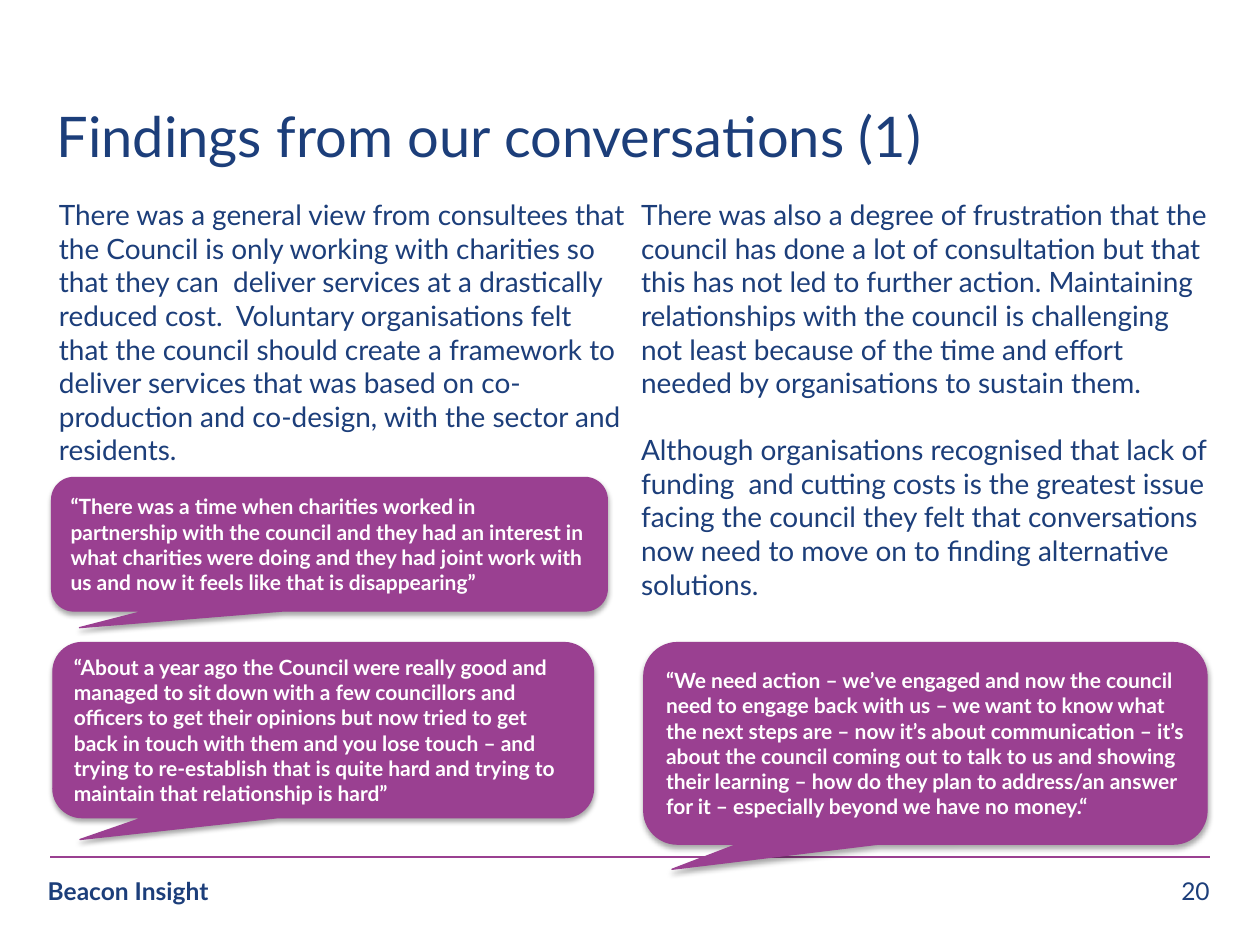
"""Build a slide of consultation findings with three quotation callouts."""
from lxml import etree
from pptx import Presentation
from pptx.dml.color import RGBColor
from pptx.enum.shapes import MSO_CONNECTOR as CONNECTOR, MSO_SHAPE as SHAPE
from pptx.enum.text import MSO_ANCHOR as ANCHOR, PP_ALIGN as ALIGN
from pptx.oxml import parse_xml
from pptx.oxml.ns import nsdecls, qn
from pptx.util import Inches, Pt

WIDTH, HEIGHT = Inches(10), Inches(7.5)
NAVY, PURPLE, WHITE = "1C3E7A", "9A4091", "FFFFFF"
FONT = "Lato"
BODY_SIZE = 16
COLUMN_LEFT, COLUMN_STEP, COLUMN_WIDTH, COLUMN_TOP = 3.7, 46.2, 47, 20.27

COLUMNS = [
    ["There was a general view from consultees that the Council is only working with "
     "charities so that they can  deliver services at a drastically reduced cost.  "
     "Voluntary organisations felt that the council should create a framework to deliver "
     "services that was based on co-production and co-design, with the sector and residents."],
    ["There was also a degree of frustration that the council has done a lot of consultation "
     "but that this has not led to further action. Maintaining relationships with the council "
     "is challenging not least because of the time and effort needed by organisations to "
     "sustain them.",
     "Although organisations recognised that lack of funding  and cutting costs is the "
     "greatest issue facing the council they felt that conversations now need to move on to "
     "finding alternative solutions."],
]
COLUMN_HEIGHTS = [30, 45]

QUOTES = [
    ((4.1, 50.53, 44.1, 14.13),
     "“There was a time when charities worked in partnership with the council and they had an "
     "interest in what charities were doing and they had joint work with us and now it feels "
     "like that is disappearing”"),
    ((4.2, 68, 42.9, 18.53),
     "“About a year ago the Council were really good and managed to sit down with a few "
     "councillors and officers to get their opinions but now tried to get back in touch with "
     "them and you lose touch – and trying to re-establish that is quite hard and trying to "
     "maintain that relationship is hard”"),
    ((51.1, 68, 44.7, 21.33),
     "“We need action – we’ve engaged and now the council need to engage back with us – we "
     "want to know what the next steps are – now it’s about communication – it’s about the "
     "council coming out to talk to us and showing their learning – how do they plan to "
     "address/an answer for it – especially beyond we have no money.“"),
]


def color(hex_string):
    """Turn a hex string into a colour."""
    return RGBColor.from_string(hex_string)


def place(left, top, width, height):
    """Turn percentages of the slide's size into lengths."""
    return [round(share * side / 100) for share, side in
            zip((left, top, width, height), (WIDTH, HEIGHT) * 2)]


def write(frame, texts, size, hex_string, bold=False, align=ALIGN.LEFT, gap=0):
    """Fill a text frame with paragraphs of one style."""
    frame.word_wrap = True
    for index, text in enumerate(texts):
        paragraph = frame.add_paragraph() if index else frame.paragraphs[0]
        paragraph.text = text
        paragraph.alignment = align
        paragraph.space_before = Pt(gap if index else 0)
        font = paragraph.font
        font.name, font.size, font.bold = FONT, Pt(size), bold
        font.color.rgb = color(hex_string)


def add_text(slide, box, texts, size, **style):
    """Add a navy text box."""
    write(slide.shapes.add_textbox(*place(*box)).text_frame, texts, size, NAVY, **style)


def add_callout(slide, box, quote):
    """Add a purple speech bubble with a soft shadow below."""
    shape = slide.shapes.add_shape(SHAPE.ROUNDED_RECTANGULAR_CALLOUT, *place(*box))
    for index, value in enumerate((-0.45, 0.625, 0.167)):
        shape.adjustments[index] = value
    shape.fill.solid()
    shape.fill.fore_color.rgb = color(PURPLE)
    shape.line.color.rgb = color(PURPLE)
    shape.line.width = Pt(0.75)
    shape.shadow.inherit = False
    shape._element.spPr.find(qn("a:effectLst")).append(parse_xml(
        f'<a:outerShdw {nsdecls("a")} blurRad="{Pt(3.1)}" dist="{Pt(1.8)}" dir="5400000" '
        'rotWithShape="0"><a:srgbClr val="000000"><a:alpha val="35000"/></a:srgbClr>'
        '</a:outerShdw>'))
    shape.text_frame.vertical_anchor = ANCHOR.MIDDLE
    write(shape.text_frame, [quote], 12, WHITE, bold=True)


def add_rule(slide, left, right, top):
    """Add a thin horizontal purple line."""
    x_start, y, x_end, _ = place(left, top, right, top)
    rule = slide.shapes.add_connector(CONNECTOR.STRAIGHT, x_start, y, x_end, y)
    rule.line.color.rgb = color(PURPLE)
    rule.line.width = Pt(1)
    etree.SubElement(rule._element.spPr, qn("a:effectLst"))


def main():
    """Build and save the slide."""
    presentation = Presentation()
    presentation.slide_width, presentation.slide_height = WIDTH, HEIGHT
    slide = presentation.slides.add_slide(presentation.slide_layouts[6])
    add_text(slide, (2.8, 92, 23.5, 4.4), ["Beacon Insight"], 14, bold=True)
    add_rule(slide, 4, 96, 90.67)
    add_text(slide, (76, 92, 21, 3.47), ["20"], 14, align=ALIGN.RIGHT)
    add_text(slide, (3.5, 10.13, 93.8, 11.47), ["Findings from our conversations (1)"], 32)
    for index, (texts, height) in enumerate(zip(COLUMNS, COLUMN_HEIGHTS)):
        left = COLUMN_LEFT + index * COLUMN_STEP
        add_text(slide, (left, COLUMN_TOP, COLUMN_WIDTH, height), texts, BODY_SIZE,
                 gap=1.2 * BODY_SIZE)
    for box, quote in QUOTES:
        add_callout(slide, box, quote)
    presentation.save("out.pptx")


if __name__ == "__main__":
    main()
